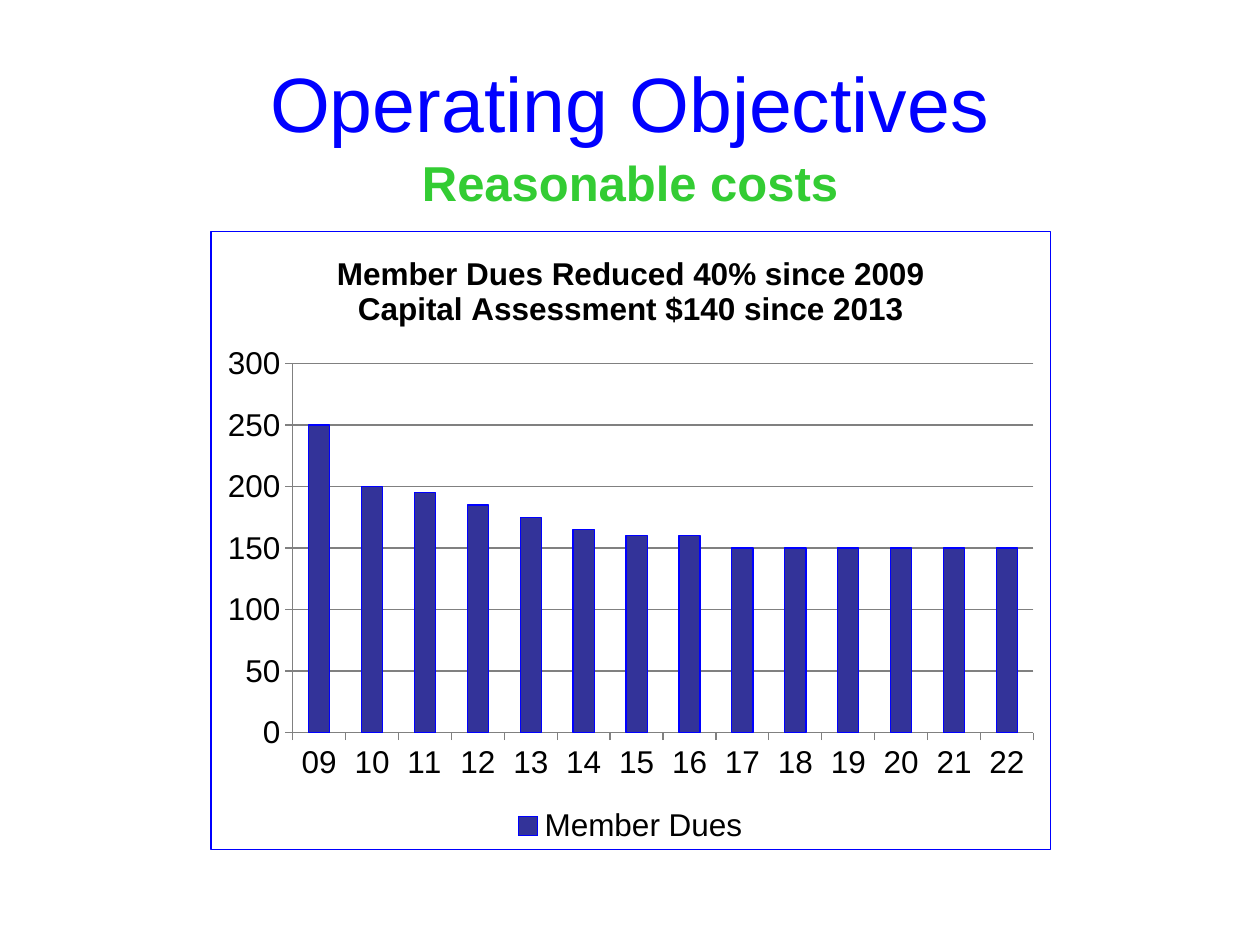
from dataclasses import dataclass

from lxml.etree import SubElement
from pptx import Presentation
from pptx.chart.chart import Chart
from pptx.chart.data import CategoryChartData
from pptx.dml.color import RGBColor
from pptx.dml.line import LineFormat
from pptx.enum.chart import XL_CHART_TYPE, XL_LEGEND_POSITION, XL_TICK_MARK
from pptx.enum.text import MSO_ANCHOR, PP_ALIGN
from pptx.oxml import parse_xml
from pptx.oxml.ns import nsdecls, qn
from pptx.text.text import Font, TextFrame
from pptx.util import Inches, Pt

BLUE, GREEN, NAVY = "0000FF", "33CC33", "333399"
BLACK, GRAY = "000000", "808080"
DUES = [250, 200, 195, 185, 175, 165, 160, 160] + [150] * 6
YEARS = [f"{year:02d}" for year in range(9, 9 + len(DUES))]


@dataclass
class Style:
    size: float
    color: str
    bold: bool = False


@dataclass
class Box:
    left: float
    top: float
    width: float
    height: float

    def spans(self) -> list:
        return [Inches(n) for n in (self.left, self.top, self.width, self.height)]


def shade(code: str) -> RGBColor:
    return RGBColor.from_string(code)


def assign(item, values: dict) -> None:
    for name, value in values.items():
        setattr(item, name, value)


def set_font(font: Font, style: Style) -> None:
    assign(font, {"name": "Arial", "size": Pt(style.size), "bold": style.bold})
    font.color.rgb = shade(style.color)


def set_line(line: LineFormat, color: str) -> None:
    line.color.rgb = shade(color)
    line.width = Pt(0.75)


def write(frame: TextFrame, text: str, style: Style, **form) -> None:
    """Fill a frame with one centred paragraph for each line."""
    frame.text = text
    for para in frame.paragraphs:
        assign(para, {"alignment": PP_ALIGN.CENTER, **form})
        set_font(para.runs[0].font, style)


def set_frame(chart: Chart, color: str) -> None:
    """Outline the whole chart area."""
    area = parse_xml(f"<c:spPr {nsdecls('c', 'a')}/>")
    chart.element.find(qn("c:chart")).addnext(area)
    line = SubElement(area, qn("a:ln"), w=str(Pt(0.75)))
    fill = SubElement(line, qn("a:solidFill"))
    SubElement(fill, qn("a:srgbClr"), val=color)


deck = Presentation()
assign(deck, {"slide_width": Inches(10), "slide_height": Inches(7.5)})
slide = deck.slides.add_slide(deck.slide_layouts[5])

# Title
title = slide.shapes.title
spans = Box(0.5, 0.33, 9, 0.95).spans()
assign(title, dict(zip(("left", "top", "width", "height"), spans)))
title.text_frame.vertical_anchor = MSO_ANCHOR.MIDDLE
write(title.text_frame, "Operating Objectives", Style(44, BLUE))

# Subtitle
lead = slide.shapes.add_textbox(*Box(0.5, 1.25, 9, 0.55).spans())
lead.text_frame.word_wrap = True
write(lead.text_frame, "Reasonable costs", Style(28, GREEN, True),
      line_spacing=0.8, space_before=Pt(5.6))

# Dues chart
data = CategoryChartData()
data.categories = YEARS
data.add_series("Member Dues", DUES)
chart = slide.shapes.add_chart(XL_CHART_TYPE.COLUMN_CLUSTERED,
                               *Box(1.67, 1.83, 6.67, 4.92).spans(), data).chart
set_font(chart.font, Style(18, BLACK))
set_frame(chart, BLUE)
write(chart.chart_title.text_frame,
      "Member Dues Reduced 40% since 2009\nCapital Assessment $140 since 2013",
      Style(18, BLACK, True))
chart.chart_title.include_in_layout = False

# Columns
plot = chart.plots[0]
assign(plot, {"gap_width": 150, "vary_by_categories": False})
bars = plot.series[0].format
bars.fill.solid()
bars.fill.fore_color.rgb = shade(NAVY)
set_line(bars.line, BLUE)

# Axes and legend
for axis in (chart.category_axis, chart.value_axis):
    axis.major_tick_mark = XL_TICK_MARK.OUTSIDE
    set_line(axis.format.line, GRAY)
assign(chart.value_axis, {"minimum_scale": 0, "maximum_scale": 300,
                          "major_unit": 50, "has_major_gridlines": True})
set_line(chart.value_axis.major_gridlines.format.line, GRAY)
chart.has_legend = True
assign(chart.legend, {"position": XL_LEGEND_POSITION.BOTTOM,
                      "include_in_layout": False})

deck.save("out.pptx")
